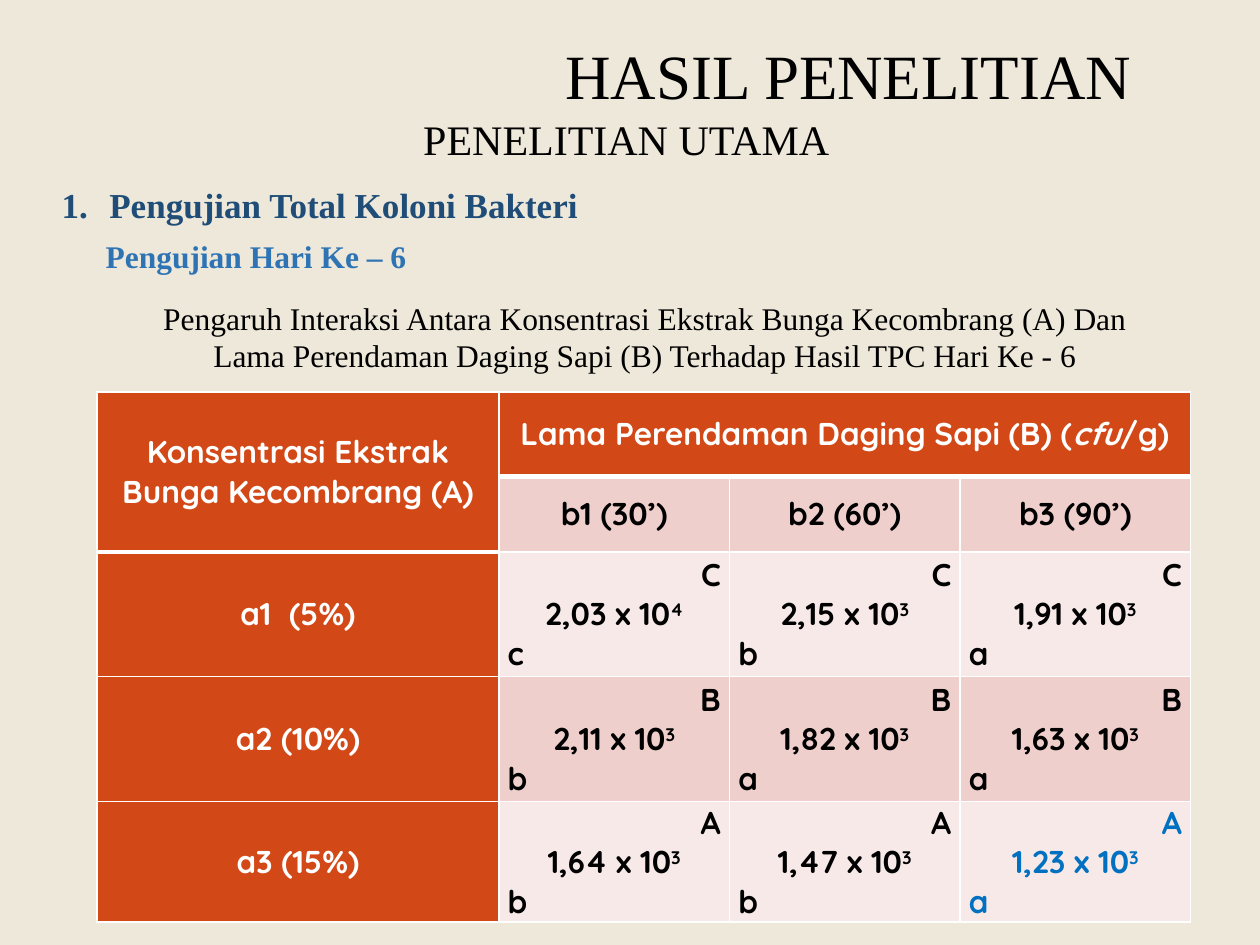
from lxml import etree
from pptx import Presentation
from pptx.dml.color import RGBColor
from pptx.enum.text import MSO_ANCHOR as Anchor, MSO_AUTO_SIZE as AutoSize, PP_ALIGN as Align
from pptx.oxml.ns import qn
from pptx.util import Inches, Pt

SERIF = "Times New Roman"
SANS = "Quicksand"
RED, WHITE, BLACK, BLUE = "D34817", "FFFFFF", "000000", "0070C0"
DARK_BAND, LIGHT_BAND = "EFCFCC", "F7E9E8"
COLUMN_WIDTHS = [3.19, 1.83, 1.83, 1.83]
ROW_HEIGHTS = [0.67, 0.6, 0.99, 0.99, 0.96]
RESULTS = [
    ("a1  (5%)", "C", [("2,03", "4", "c"), ("2,15", "3", "b"), ("1,91", "3", "a")]),
    ("a2 (10%)", "B", [("2,11", "3", "b"), ("1,82", "3", "a"), ("1,63", "3", "a")]),
    ("a3 (15%)", "A", [("1,64", "3", "b"), ("1,47", "3", "b"), ("1,23", "3", "a")]),
]


def color(value):
    return RGBColor.from_string(value)


def write(paragraph, text, size=18, font=SERIF, fill=BLACK, bold=False,
          italic=False, superscript=False, align=None, spacing=None):
    run = paragraph.add_run()
    run.text = text
    run.font.size = Pt(size)
    run.font.name = font
    run.font.bold = bold
    run.font.italic = italic
    run.font.color.rgb = color(fill)
    if superscript:
        run.font._element.set("baseline", "30000")
    if align is not None:
        paragraph.alignment = align
    if spacing is not None:
        paragraph.line_spacing = spacing


def add_text(slide, box, text, anchor=Anchor.TOP, wrap=True, grow=True, **style):
    shape = slide.shapes.add_textbox(*map(Inches, box))
    frame = shape.text_frame
    frame.word_wrap = wrap
    frame.auto_size = AutoSize.SHAPE_TO_FIT_TEXT if grow else AutoSize.NONE
    frame.vertical_anchor = anchor
    write(frame.paragraphs[0], text, **style)
    return frame.paragraphs[0]


def add_title(slide, box, text, **style):
    title = slide.shapes.title
    title.left, title.top, title.width, title.height = map(Inches, box)
    title.text_frame.vertical_anchor = Anchor.MIDDLE
    title.text_frame.auto_size = AutoSize.NONE
    write(title.text_frame.paragraphs[0], text, **style)


def number(paragraph, indent):
    properties = paragraph._p.get_or_add_pPr()
    properties.set("marL", str(Inches(indent)))
    properties.set("indent", str(-Inches(indent)))
    etree.SubElement(properties, qn("a:buFont"), typeface="+mj-lt")
    etree.SubElement(properties, qn("a:buAutoNum"), type="arabicPeriod")


def format_cell(cell, fill, bottom=1):
    cell.margin_left = cell.margin_right = Inches(0.07)
    cell.margin_top = cell.margin_bottom = 0
    cell.vertical_anchor = Anchor.MIDDLE
    properties = cell._tc.get_or_add_tcPr()
    for side, width in (("L", 1), ("R", 1), ("T", 1), ("B", bottom)):
        line = etree.SubElement(properties, qn(f"a:ln{side}"), w=str(Pt(width)))
        solid = etree.SubElement(line, qn("a:solidFill"))
        etree.SubElement(solid, qn("a:srgbClr"), val=WHITE)
    cell.fill.solid()
    cell.fill.fore_color.rgb = color(fill)


def write_cell(cell, text, **style):
    write(cell.text_frame.paragraphs[0], text, font=SANS, bold=True,
          align=Align.CENTER, **style)


def write_result(cell, upper, value, exponent, lower, fill):
    style = dict(font=SANS, bold=True, fill=fill)
    frame = cell.text_frame
    write(frame.paragraphs[0], upper, align=Align.RIGHT, **style)
    middle = frame.add_paragraph()
    write(middle, f"{value} x 10", align=Align.CENTER, **style)
    write(middle, exponent, superscript=True, **style)
    write(frame.add_paragraph(), lower, align=Align.LEFT, **style)


def add_results_table(slide):
    table = slide.shapes.add_table(
        len(ROW_HEIGHTS), len(COLUMN_WIDTHS), Inches(0.77), Inches(3.11),
        Inches(sum(COLUMN_WIDTHS)), Inches(sum(ROW_HEIGHTS))).table
    for column, width in zip(table.columns, COLUMN_WIDTHS):
        column.width = Inches(width)
    for row, height in zip(table.rows, ROW_HEIGHTS):
        row.height = Inches(height)
    for row in range(len(ROW_HEIGHTS)):
        for column in range(len(COLUMN_WIDTHS)):
            header = row == 0 or column == 0
            band = DARK_BAND if row % 2 else LIGHT_BAND
            thick = row == 0 or (row, column) == (1, 0)
            format_cell(table.cell(row, column), RED if header else band, 3 if thick else 1)
    table.cell(0, 0).merge(table.cell(1, 0))
    table.cell(0, 1).merge(table.cell(0, 3))

    write_cell(table.cell(0, 0), "Konsentrasi Ekstrak Bunga Kecombrang (A)", fill=WHITE)
    for text, italic in (("Lama Perendaman Daging Sapi (B) (", False), ("cfu", True), ("/g)", False)):
        write_cell(table.cell(0, 1), text, fill=WHITE, italic=italic)
    for column in range(1, 4):
        write_cell(table.cell(1, column), f"b{column} ({30 * column}’)")
    for row, (label, upper, results) in enumerate(RESULTS, 2):
        write_cell(table.cell(row, 0), label, fill=WHITE)
        for column, result in enumerate(results, 1):
            best = (row, column) == (4, 3)
            write_result(table.cell(row, column), upper, *result, BLUE if best else BLACK)


def main():
    presentation = Presentation()
    presentation.slide_width, presentation.slide_height = Inches(10), Inches(7.5)
    slide = presentation.slides.add_slide(presentation.slide_layouts[5])
    slide.background.fill.solid()
    slide.background.fill.fore_color.rgb = color("EEE8DA")

    add_title(slide, (2.11, 0.3, 6.97, 0.66), "HASIL PENELITIAN",
              size=36, align=Align.RIGHT, spacing=0.9)
    add_text(slide, (1.26, 0.95, 5.42, 0.4), "PENELITIAN UTAMA", anchor=Anchor.MIDDLE,
             grow=False, size=24, align=Align.RIGHT, spacing=0.7)
    heading = add_text(slide, (0.39, 1.07, 4.5, 0.68), "Pengujian Total Koloni Bakteri",
                       size=20, fill="1F4D78", bold=True, spacing=2.0)
    number(heading, 0.38)
    add_text(slide, (0.74, 1.53, 2.74, 0.71), "Pengujian Hari Ke – 6", wrap=False,
             fill="2E74B5", bold=True, spacing=2.0)
    add_text(slide, (1.03, 2.32, 8.18, 0.71),
             "Pengaruh Interaksi Antara Konsentrasi Ekstrak Bunga Kecombrang (A) Dan "
             "Lama Perendaman Daging Sapi (B) Terhadap Hasil TPC Hari Ke - 6",
             align=Align.CENTER)
    add_results_table(slide)
    presentation.save("out.pptx")


if __name__ == "__main__":
    main()
